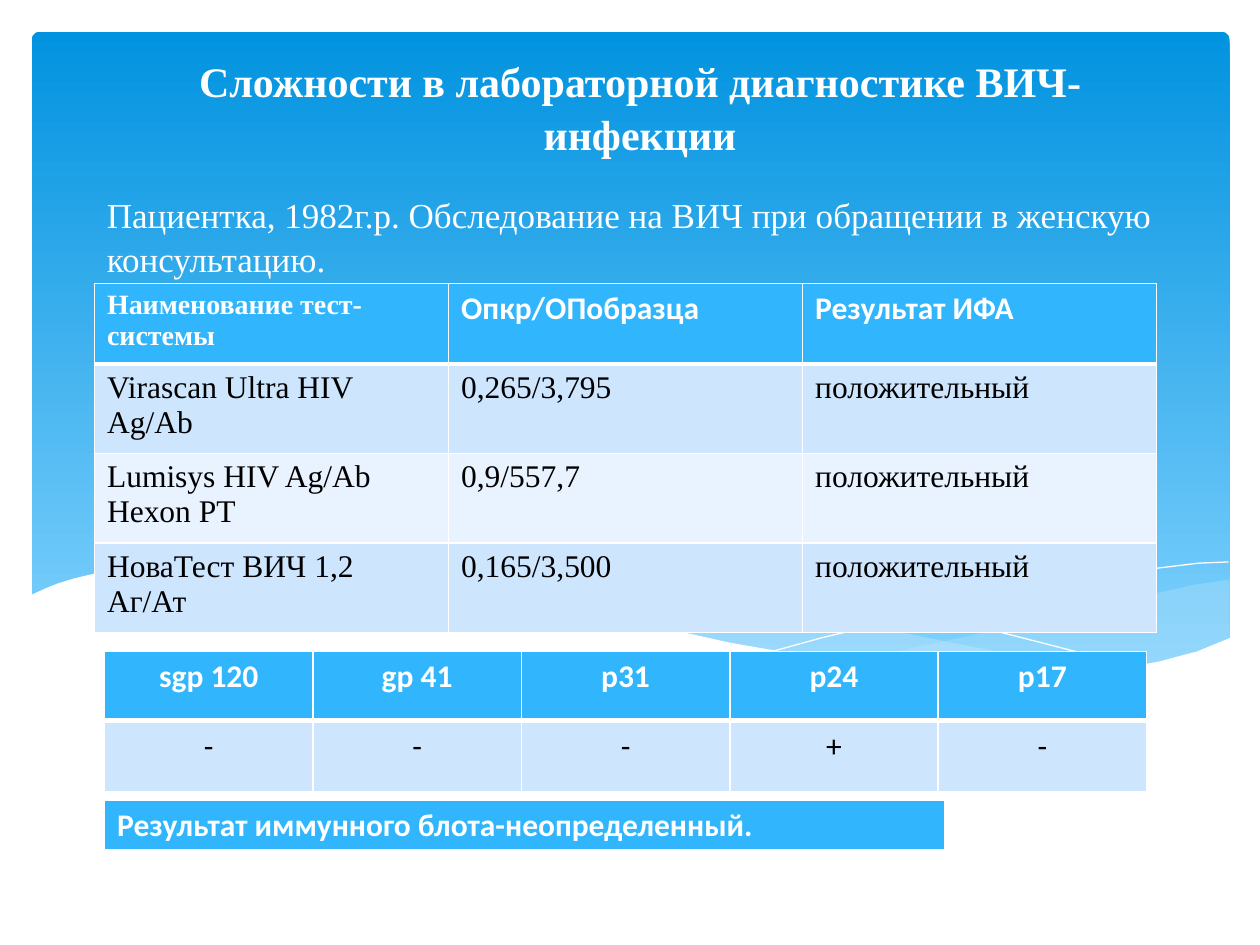
from lxml.etree import SubElement
from pptx import Presentation
from pptx.dml.color import RGBColor
from pptx.enum.shapes import MSO_SHAPE
from pptx.enum.text import MSO_ANCHOR, PP_ALIGN
from pptx.oxml.ns import qn
from pptx.util import Pt

PX = 9144  # EMU in one px, 100 px to the inch
THEME = {
    "white": "FFFFFF", "black": "000000", "sky_top": "0293E0", "sky_bottom": "83D3FE",
    "wave": "C6E7FC", "header": "31B6FD", "odd": "CEE5FE", "even": "E8F3FF",
    "serif": "Times New Roman", "sans": "Calibri",
    "heading": 24, "intro": 20, "cell": 18, "small": 16,
}


def write_text(frame, text, font, size, color="white", bold=False, **paragraph_format):
    frame.word_wrap = True
    paragraph = frame.paragraphs[0]
    for name, value in paragraph_format.items():
        setattr(paragraph, name, value)
    run = paragraph.add_run()
    run.text = text
    font_format = {"name": THEME[font], "size": Pt(THEME[size]), "bold": bold}
    for name, value in font_format.items():
        setattr(run.font, name, value)
    run.font.color.rgb = RGBColor.from_string(THEME[color])


def add_grid(box, row_heights, rows, body_font, alignment, header_styles=()):
    """Add a table with a header row, banded body rows and white borders."""
    left, top, width, height = (value * PX for value in box)
    table = shapes.add_table(len(rows), len(rows[0]), left, top, width, height).table
    table.first_row = table.horz_banding = False
    for column in table.columns:
        column.width = width // len(rows[0])
    for row_index, texts in enumerate(rows):
        table.rows[row_index].height = row_heights[row_index] * PX
        is_header = row_index == 0
        fill = "header" if is_header else ("even", "odd")[row_index % 2]
        borders = {"lnL": 1, "lnR": 1, "lnT": 3 if row_index == 1 else 1, "lnB": 3 if is_header else 1}
        for column_index, text in enumerate(texts):
            cell = table.cell(row_index, column_index)
            properties = cell._tc.get_or_add_tcPr()
            for tag, points in borders.items():
                line = SubElement(properties, qn(f"a:{tag}"), w=str(Pt(points)))
                line_fill = SubElement(line, qn("a:solidFill"))
                SubElement(line_fill, qn("a:srgbClr"), val=THEME["white"])
            cell.fill.solid()
            cell.fill.fore_color.rgb = RGBColor.from_string(THEME[fill])
            font, size = (body_font, "cell")
            if is_header:
                font, size = dict(enumerate(header_styles)).get(column_index, ("sans", "cell"))
            write_text(cell.text_frame, text, font, size, "white" if is_header else "black",
                       is_header, alignment=alignment)


presentation = Presentation()
presentation.slide_width, presentation.slide_height = 1000 * PX, 750 * PX
slide = presentation.slides.add_slide(presentation.slide_layouts[6])
shapes = slide.shapes

# Sky panel
sky = shapes.add_shape(MSO_SHAPE.ROUNDED_RECTANGLE, 25 * PX, 25 * PX, 951 * PX, 518 * PX)
sky.adjustments[0] = 0.013
sky.shadow.inherit = False
sky.line.fill.background()
sky.fill.gradient()
sky.fill.gradient_angle = 270
for stop, color in zip(sky.fill.gradient_stops, ("sky_top", "sky_bottom")):
    stop.color.rgb = RGBColor.from_string(THEME[color])

# Waves: fill colour (None draws a line), opacity in percent, points
WAVES = [
    ("wave", 29, [(976, 460), (948, 464), (921, 470), (891, 476), (861, 483), (805, 497), (753, 508),
                  (706, 518), (661, 525), (691, 530), (732, 534), (769, 537), (803, 538), (835, 537),
                  (863, 535), (889, 532), (913, 527), (935, 522), (963, 512), (976, 507)]),
    ("wave", 40, [(893, 533), (837, 525), (775, 514), (706, 500), (629, 482), (584, 471), (541, 463),
                  (489, 454), (442, 449), (399, 446), (361, 446), (328, 447), (286, 452), (323, 456),
                  (362, 463), (404, 471), (449, 482), (530, 501), (584, 512), (634, 521), (680, 528),
                  (722, 534), (761, 537), (796, 539), (828, 538), (857, 537), (876, 535)]),
    (None, 100, [(309, 456), (328, 452), (353, 449), (387, 448), (433, 447), (469, 449), (510, 452),
                 (556, 457), (608, 464), (665, 473), (727, 486), (795, 502), (869, 521), (907, 532)]),
    (None, 100, [(613, 517), (653, 506), (695, 496), (748, 483), (806, 470), (866, 459), (910, 452),
                 (951, 447), (975, 446)]),
    ("white", 100, [(977, 506), (950, 517), (920, 525), (887, 531), (850, 535), (809, 537), (761, 535),
                    (708, 530), (648, 522), (579, 510), (503, 493), (447, 480), (391, 467), (340, 458),
                    (292, 451), (250, 446), (211, 444), (177, 444), (146, 445), (119, 448), (95, 451),
                    (76, 455), (59, 459), (46, 463), (36, 467), (23, 473), (23, 589), (977, 589)]),
]
for color, opacity, points in WAVES:
    builder = shapes.build_freeform(*points[0], scale=PX)
    builder.add_line_segments(points[1:], close=color is not None)
    wave = builder.convert_to_shape()
    wave.shadow.inherit = False
    if color is None:
        wave.fill.background()
        wave.line.width = 0
        wave.line.color.rgb = RGBColor.from_string(THEME["white"])
        continue
    wave.line.fill.background()
    wave.fill.solid()
    wave.fill.fore_color.rgb = RGBColor.from_string(THEME[color])
    if opacity < 100:
        wave_color = wave._element.spPr.find(qn("a:solidFill")).find(qn("a:srgbClr"))
        SubElement(wave_color, qn("a:alpha"), val=str(opacity * 1000))

# Heading and introduction
intro = shapes.add_textbox(75 * PX, 147 * PX, 850 * PX, 71 * PX).text_frame
write_text(intro, "Пациентка, 1982г.р. Обследование на ВИЧ при обращении в женскую консультацию.",
           "serif", "intro", line_spacing=1.05)
heading = shapes.add_textbox(122 * PX, 52 * PX, 772 * PX, 79 * PX).text_frame
heading.vertical_anchor = MSO_ANCHOR.BOTTOM
write_text(heading, "Сложности в лабораторной диагностике ВИЧ-инфекции", "serif", "heading",
           bold=True, alignment=PP_ALIGN.CENTER, line_spacing=1.05)

# Test results
add_grid((75, 225, 843, 276), (64, 71, 71, 71), [
    ("Наименование тест-системы", "Опкр/ОПобразца", "Результат ИФА"),
    ("Virascan Ultra HIV Ag/Ab", "0,265/3,795", "положительный"),
    ("Lumisys HIV Ag/Ab Hexon PT", "0,9/557,7", "положительный"),
    ("НоваТест ВИЧ 1,2 Аг/Ат", "0,165/3,500", "положительный"),
], "serif", PP_ALIGN.LEFT, header_styles=[("serif", "small")])
add_grid((83, 517, 827, 110), (55, 56), [
    ("sgp 120", "gp 41", "p31", "p24", "p17"),
    ("-", "-", "-", "+", "-"),
], "sans", PP_ALIGN.CENTER)
add_grid((83, 635, 667, 41), (41,), [("Результат иммунного блота-неопределенный.",)],
         "sans", PP_ALIGN.LEFT)

presentation.save("out.pptx")
